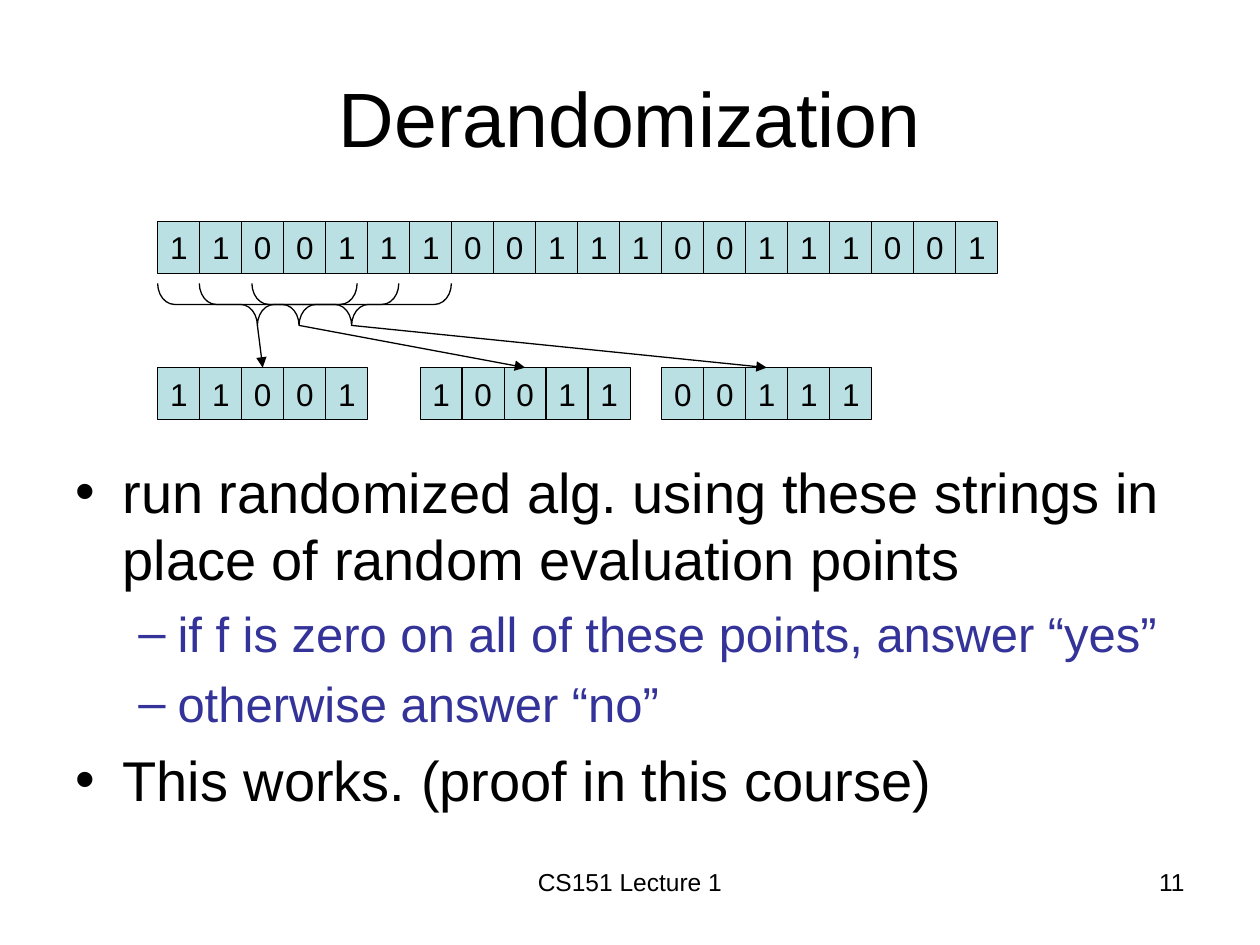
from lxml.etree import SubElement
from pptx import Presentation
from pptx.dml.color import RGBColor
from pptx.enum.shapes import MSO_CONNECTOR, MSO_SHAPE
from pptx.enum.text import MSO_ANCHOR, PP_ALIGN
from pptx.oxml.ns import qn
from pptx.util import Cm, Pt

BLACK, BLUE, TEAL = "000000", "333399", "BBE0E3"
CELL, TALL = 2.54 / 3, 1.05
LEFT, TOP, LOW = 3.18, 4.46, 7.41
TIP = 6.56
BITS = "11001110011100111001"
PARTS = [
    (3.18, "11001", 3.18),
    (8.47, "10011", 4.02),
    (13.34, "00111", 5.08),
]
POINTS = [
    (0, "run randomized alg. using these strings in place of random evaluation points"),
    (1, "if f is zero on all of these points, answer “yes”"),
    (1, "otherwise answer “no”"),
    (0, "This works. (proof in this course)"),
]
LEVELS = [("•", 32, BLACK, 0.95, 0.95, 7.4), ("–", 28, BLUE, 2.06, 0.79, 6.5)]


def color(code):
    return RGBColor.from_string(code)


def add_run(para, text, size, code=BLACK):
    run = para.add_run()
    run.text = text
    run.font.name = "Arial"
    run.font.size = Pt(size)
    run.font.color.rgb = color(code)


def add_box(slide, left, top, width, height):
    frame = slide.shapes.add_textbox(Cm(left), Cm(top), Cm(width), Cm(height)).text_frame
    frame.word_wrap = True
    return frame


def add_label(slide, place, text, size, align, anchor=MSO_ANCHOR.TOP):
    frame = add_box(slide, *place)
    frame.vertical_anchor = anchor
    para = frame.paragraphs[0]
    para.alignment = align
    add_run(para, text, size)


def add_list(slide, place):
    frame = add_box(slide, *place)
    for index, (level, text) in enumerate(POINTS):
        para = frame.add_paragraph() if index else frame.paragraphs[0]
        mark, size, code, margin, hang, gap = LEVELS[level]
        para.level = level
        if index:
            para.space_before = Pt(gap)
        props = para._p.get_or_add_pPr()
        props.set("marL", str(Cm(margin)))
        props.set("indent", str(-Cm(hang)))
        SubElement(props, qn("a:buFont"), typeface="Arial")
        SubElement(props, qn("a:buChar"), char=mark)
        add_run(para, text, size, code)


def add_shape(slide, kind, left, top, width, height):
    shape = slide.shapes.add_shape(kind, Cm(left), Cm(top), Cm(width), Cm(height))
    shape.shadow.inherit = False
    shape.line.color.rgb = color(BLACK)
    shape.line.width = Pt(0.75)
    return shape


def add_bits(slide, left, top, bits):
    for index, bit in enumerate(bits):
        cell = add_shape(slide, MSO_SHAPE.RECTANGLE, left + index * CELL, top, CELL, TALL)
        cell.fill.solid()
        cell.fill.fore_color.rgb = color(TEAL)
        frame = cell.text_frame
        frame.margin_left = frame.margin_right = 0
        frame.vertical_anchor = MSO_ANCHOR.MIDDLE
        para = frame.paragraphs[0]
        para.alignment = PP_ALIGN.CENTER
        add_run(para, bit, 18)


def add_brace(slide, left, span):
    middle = left + span / 2
    top = TIP - CELL / 2 - span / 2
    brace = add_shape(slide, MSO_SHAPE.LEFT_BRACE, middle - CELL / 2, top, CELL, span)
    brace.rotation = 270
    brace.adjustments[0] = 0.4
    brace.fill.background()
    return middle


def add_arrow(slide, start, end):
    points = [Cm(value) for value in (*start, *end)]
    arrow = slide.shapes.add_connector(MSO_CONNECTOR.STRAIGHT, *points)
    arrow.line.color.rgb = color(BLACK)
    arrow.line.width = Pt(0.75)
    SubElement(arrow.line._get_or_add_ln(), qn("a:tailEnd"), type="triangle")
    SubElement(arrow._element.spPr, qn("a:effectLst"))


def main():
    deck = Presentation()
    deck.slide_width, deck.slide_height = Cm(25.4), Cm(19.05)
    slide = deck.slides.add_slide(deck.slide_layouts[6])
    add_label(slide, (1.27, 0.76, 22.86, 3.18), "Derandomization", 44,
              PP_ALIGN.CENTER, MSO_ANCHOR.MIDDLE)
    add_list(slide, (1.27, 9.1, 22.86, 7.92))
    add_bits(slide, LEFT, TOP, BITS)
    for left, bits, source in PARTS:
        add_bits(slide, left, LOW, bits)
        middle = add_brace(slide, source, 4.02)
        add_arrow(slide, (middle, TIP), (left + len(bits) * CELL / 2, LOW))
    add_label(slide, (8.68, 17.35, 8.04, 1.32), "CS151 Lecture 1", 14, PP_ALIGN.CENTER)
    add_label(slide, (18.2, 17.35, 5.93, 1.32), "11", 14, PP_ALIGN.RIGHT)
    deck.save("out.pptx")


if __name__ == "__main__":
    main()
